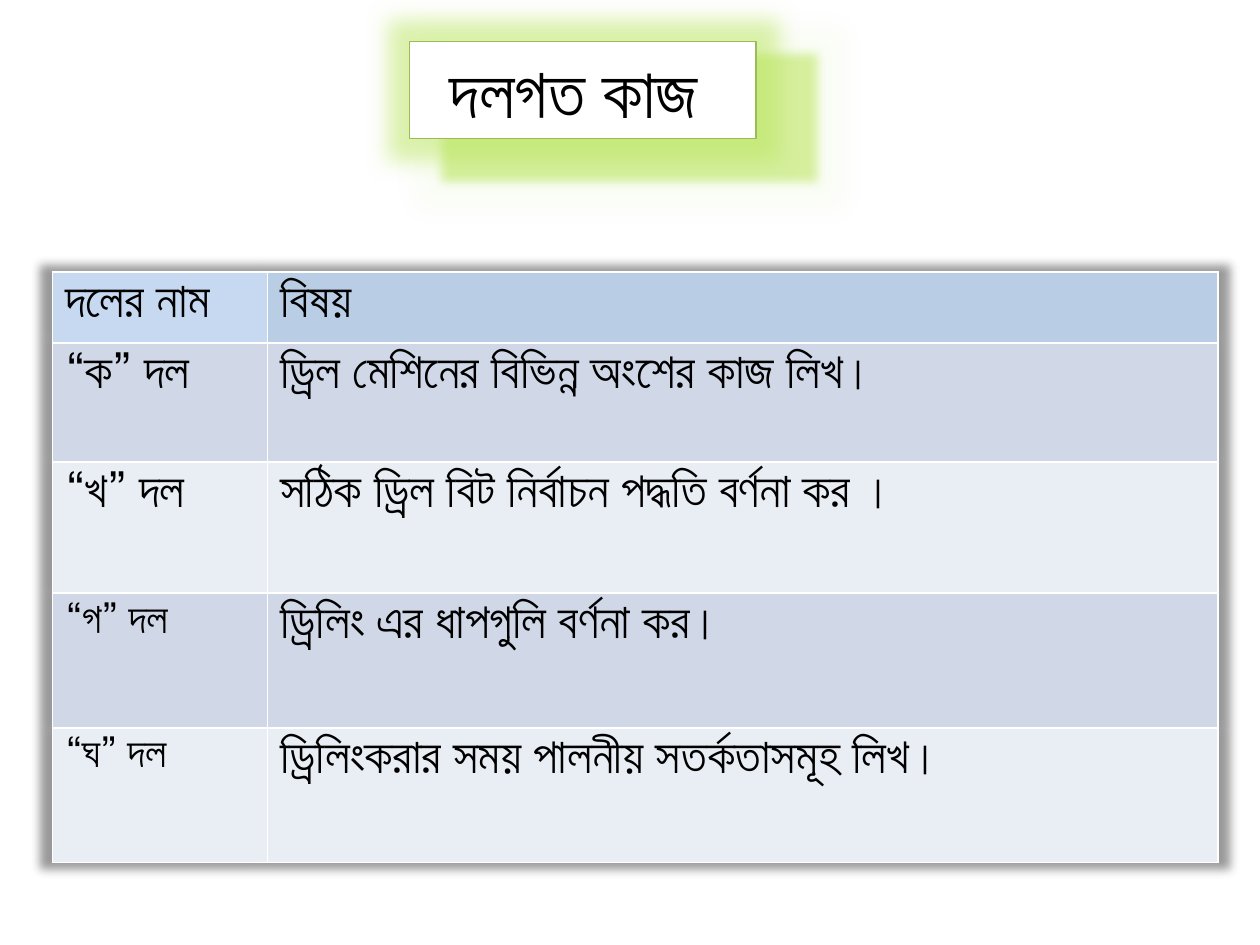
from dataclasses import dataclass

from lxml import etree
from pptx import Presentation
from pptx.dml.color import RGBColor
from pptx.enum.text import MSO_ANCHOR, PP_ALIGN
from pptx.util import Pt

CENTER = PP_ALIGN.CENTER
MIDDLE = MSO_ANCHOR.MIDDLE
NS = "http://schemas.openxmlformats.org/drawingml/2006/main"
FONT = "Lato"
COLORS = {
    "text": "000000",
    "white": "FFFFFF",
    "title_line": "9BBB59",
    "glow": "B9E55D",
    "head_name": "C6D9F1",
    "head_topic": "B9CDE5",
    "band_dark": "D0D8E8",
    "band_light": "E9EDF4",
}


@dataclass
class GroupRow:
    name: str
    topic: str
    height: float
    name_size: int = 28
    topic_size: int = 28


ROWS = [
    GroupRow("দলের নাম", "বিষয়", 40.5),
    GroupRow("“ক” দল", "ড্রিল মেশিনের বিভিন্ন অংশের কাজ লিখ।", 68),
    GroupRow("“খ” দল", "সঠিক ড্রিল বিট নির্বাচন পদ্ধতি বর্ণনা কর ।", 75),
    GroupRow("“গ” দল", "ড্রিলিং এর ধাপগুলি বর্ণনা কর।", 77, name_size=24),
    GroupRow("“ঘ” দল", "ড্রিলিংকরার সময় পালনীয় সতর্কতাসমূহ লিখ।", 77, name_size=24),
]
COLUMNS = (123, 543)


def rgb(name: str) -> RGBColor:
    return RGBColor.from_string(COLORS[name])


def effects(xml: str):
    return etree.fromstring(f'<a:effectLst xmlns:a="{NS}">{xml}</a:effectLst>')


def style_text(p, size: float) -> None:
    p.font.name = FONT
    p.font.size = Pt(size)
    p.font.bold = False
    p.font.color.rgb = rgb("text")


def fill_cell(cell, text: str, size: float, fill: str) -> None:
    cell.text = text
    style_text(cell.text_frame.paragraphs[0], size)
    tc_pr = cell._tc.get_or_add_tcPr()
    for side in ("lnL", "lnR", "lnT", "lnB"):
        tc_pr.append(etree.fromstring(
            f'<a:{side} xmlns:a="{NS}" w="{Pt(1)}"><a:solidFill>'
            f'<a:srgbClr val="{COLORS["white"]}"/></a:solidFill></a:{side}>'))
    cell.fill.solid()
    cell.fill.fore_color.rgb = rgb(fill)


def add_title(s, text: str) -> None:
    sp = s.shapes.title
    sp.left, sp.top, sp.width, sp.height = Pt(234), Pt(23.75), Pt(198), Pt(55.5)
    sp.fill.solid()
    sp.fill.fore_color.rgb = rgb("white")
    sp.line.color.rgb = rgb("title_line")
    sp.line.width = Pt(0.75)
    tf = sp.text_frame
    tf.text = text
    tf.vertical_anchor = MIDDLE
    p = tf.paragraphs[0]
    p.alignment = CENTER
    style_text(p, 40)
    # Wide soft glow over a tighter shadow of the same green
    sp._element.spPr.append(effects(
        f'<a:glow rad="{Pt(25)}"><a:srgbClr val="{COLORS["glow"]}">'
        '<a:alpha val="50000"/></a:srgbClr></a:glow>'
        f'<a:outerShdw blurRad="{Pt(6)}" sx="108000" sy="130000" algn="ctr" '
        f'rotWithShape="0"><a:srgbClr val="{COLORS["glow"]}">'
        '<a:alpha val="60000"/></a:srgbClr></a:outerShdw>'))


def add_groups(s, rows: list[GroupRow]) -> None:
    height = sum(row.height for row in rows)
    frame = s.shapes.add_table(len(rows), len(COLUMNS), Pt(30), Pt(155.5),
                               Pt(sum(COLUMNS)), Pt(height))
    table = frame.table
    for column, width in zip(table.columns, COLUMNS):
        column.width = Pt(width)
    for i, row in enumerate(rows):
        table.rows[i].height = Pt(row.height)
        band = "band_dark" if i % 2 else "band_light"
        fills = (band, band) if i else ("head_name", "head_topic")
        fill_cell(table.cell(i, 0), row.name, row.name_size, fills[0])
        fill_cell(table.cell(i, 1), row.topic, row.topic_size, fills[1])
    # Soft dark shadow around the table
    table._tbl.tblPr.insert(0, effects(
        f'<a:outerShdw blurRad="{Pt(5)}" sx="102000" sy="102000" algn="ctr" '
        f'rotWithShape="0"><a:srgbClr val="{COLORS["text"]}">'
        '<a:alpha val="40000"/></a:srgbClr></a:outerShdw>'))


def main() -> None:
    prs = Presentation()
    prs.slide_width, prs.slide_height = Pt(720), Pt(540)
    s = prs.slides.add_slide(prs.slide_layouts[5])
    add_title(s, "দলগত কাজ ")
    add_groups(s, ROWS)
    prs.save("out.pptx")


if __name__ == "__main__":
    main()
